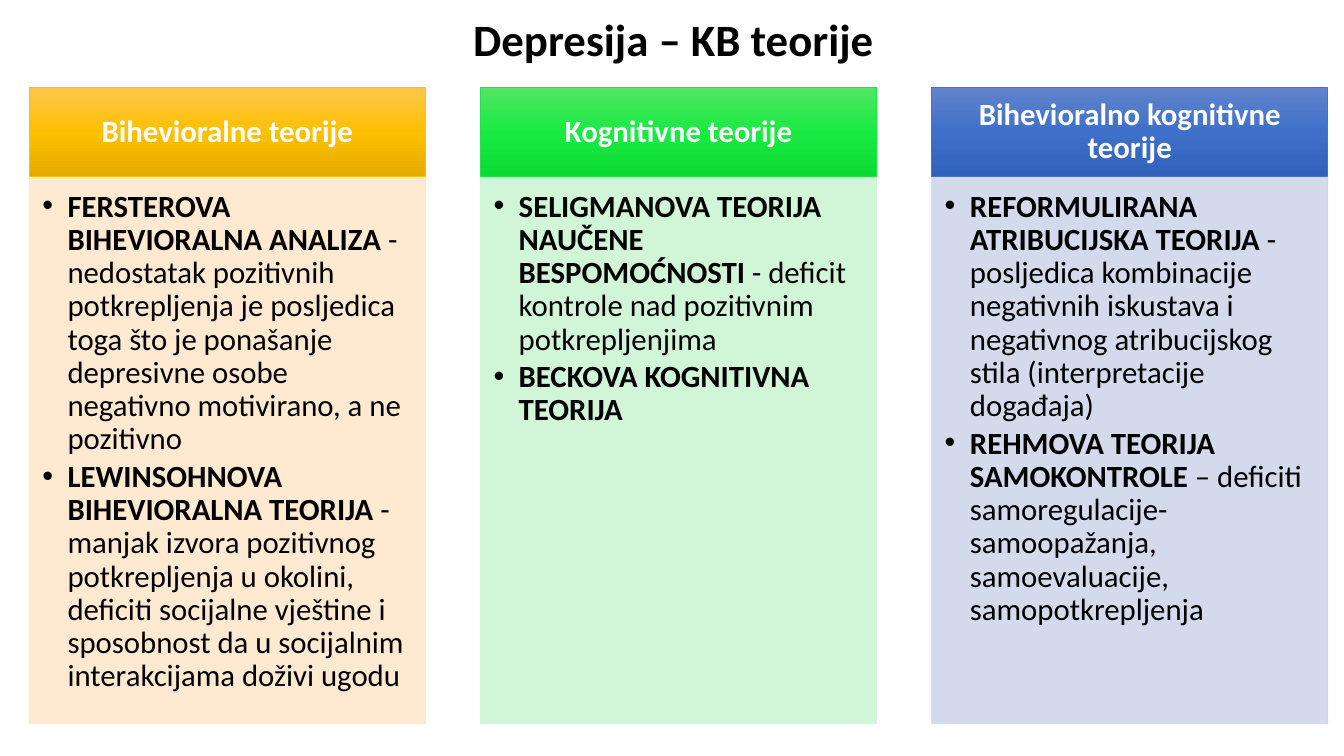
from dataclasses import dataclass

from lxml.etree import SubElement
from pptx import Presentation
from pptx.dml.color import RGBColor
from pptx.enum.shapes import MSO_SHAPE as Preset
from pptx.enum.text import MSO_ANCHOR as Anchor, MSO_AUTO_SIZE as AutoSize, PP_ALIGN as Align
from pptx.oxml.ns import qn
from pptx.util import Inches, Pt


@dataclass(frozen=True)
class Theme:
    font: str = "Calibri"
    title_size: int = 32
    text_size: int = 22
    dark: str = "000000"
    light: str = "FFFFFF"
    line_width: float = 0.5
    body_opacity: int = 90


@dataclass(frozen=True)
class Theory:
    name: str
    description: str = ""


@dataclass(frozen=True)
class Column:
    heading: str
    gradient: tuple[str, str, str]
    outline: str
    tint: str
    theories: tuple[Theory, ...]


THEME = Theme()
COLUMN_LEFT, COLUMN_PITCH, COLUMN_WIDTH = 0.29, (9.24 - 0.29) / 2, 3.93
HEADER_TOP, HEADER_HEIGHT = 0.87, 0.88
BODY_TOP, BODY_HEIGHT = 1.76, 5.42
COMPARISON_LAYOUT = 4

COLUMNS = (
    Column("Bihevioralne teorije", ("FFC64B", "FFC000", "E3AB00"), "FFC000", "FFE8CC", (
        Theory("FERSTEROVA BIHEVIORALNA ANALIZA ",
               "- nedostatak pozitivnih potkrepljenja je posljedica toga što je ponašanje "
               "depresivne osobe negativno motivirano, a ne pozitivno"),
        Theory("LEWINSOHNOVA BIHEVIORALNA TEORIJA ",
               "- manjak izvora pozitivnog potkrepljenja u okolini, deficiti socijalne vještine i "
               "sposobnost da u socijalnim interakcijama doživi ugodu"),
    )),
    Column("Kognitivne teorije", ("51E663", "19EA42", "0CDB34"), "23E148", "CCF6D3", (
        Theory("SELIGMANOVA TEORIJA NAUČENE BESPOMOĆNOSTI ",
               "- deficit kontrole nad pozitivnim potkrepljenjima"),
        Theory("BECKOVA KOGNITIVNA TEORIJA"),
    )),
    Column("Bihevioralno kognitivne teorije", ("6183CB", "3E70CA", "3062BB"), "4472C4", "CFD6EA", (
        Theory("REFORMULIRANA ATRIBUCIJSKA TEORIJA ",
               "- posljedica kombinacije negativnih iskustava i negativnog atribucijskog stila "
               "(interpretacije događaja)"),
        Theory("REHMOVA TEORIJA SAMOKONTROLE ",
               "– deficiti samoregulacije- samoopažanja, samoevaluacije, samopotkrepljenja"),
    )),
)


def place(box, left: float, top: float, width: float, height: float) -> None:
    box.left, box.top = Inches(left), Inches(top)
    box.width, box.height = Inches(width), Inches(height)


def set_frame(frame, anchor: Anchor, insets: tuple[float, float, float, float]) -> None:
    frame.word_wrap = True
    frame.auto_size = AutoSize.NONE
    frame.vertical_anchor = anchor
    frame.margin_left, frame.margin_top, frame.margin_right, frame.margin_bottom = map(Inches, insets)


def set_para(para, align: Align, space_after: float = 0) -> None:
    para.alignment = align
    para.line_spacing = 0.9
    para.space_before = Pt(0)
    para.space_after = Pt(space_after)


def add_span(para, text: str, size: int, color: str, bold: bool) -> None:
    span = para.add_run()
    span.text = text
    span.font.name = THEME.font
    span.font.size = Pt(size)
    span.font.bold = bold
    span.font.color.rgb = RGBColor.from_string(color)


def add_bullet(para) -> None:
    properties = para._p.get_or_add_pPr()
    properties.set("marL", str(Inches(0.25)))
    properties.set("indent", str(Inches(-0.25)))
    SubElement(properties, qn("a:buFont"), typeface="Arial")
    SubElement(properties, qn("a:buChar"), char="•")


def set_outline(box, color: str) -> None:
    box.line.color.rgb = RGBColor.from_string(color)
    box.line.width = Pt(THEME.line_width)


def fill_gradient(box, colors: tuple[str, str, str]) -> None:
    box.fill.gradient()
    box.fill.gradient_angle = 270
    stops = box._element.spPr.find(".//" + qn("a:gsLst"))
    stops.clear()
    for index, color in enumerate(colors):
        stop = SubElement(stops, qn("a:gs"), pos=str(index * 50000))
        SubElement(stop, qn("a:srgbClr"), val=color)


def write_title(title, text: str) -> None:
    place(title, 0.93, 0.17, 11.5, 0.49)
    set_frame(title.text_frame, Anchor.MIDDLE, (0.1, 0.05, 0.1, 0.05))
    para = title.text_frame.paragraphs[0]
    set_para(para, Align.CENTER)
    add_span(para, text, THEME.title_size, THEME.dark, True)


def add_header(slide, column: Column, left: float) -> None:
    box = slide.shapes.add_shape(Preset.RECTANGLE, Inches(left), Inches(HEADER_TOP),
                                 Inches(COLUMN_WIDTH), Inches(HEADER_HEIGHT))
    box.shadow.inherit = False
    fill_gradient(box, column.gradient)
    set_outline(box, column.outline)
    set_frame(box.text_frame, Anchor.MIDDLE, (0.17, 0.1, 0.17, 0.1))
    para = box.text_frame.paragraphs[0]
    set_para(para, Align.CENTER)
    add_span(para, column.heading, THEME.text_size, THEME.light, True)


def write_body(body, column: Column, left: float) -> None:
    place(body, left, BODY_TOP, COLUMN_WIDTH, BODY_HEIGHT)
    body.fill.solid()
    body.fill.fore_color.rgb = RGBColor.from_string(column.tint)
    set_outline(body, column.tint)
    for color in body._element.spPr.iter(qn("a:srgbClr")):
        SubElement(color, qn("a:alpha"), val=str(THEME.body_opacity * 1000))
    frame = body.text_frame
    set_frame(frame, Anchor.TOP, (0.13, 0.13, 0.17, 0.19))
    for index, theory in enumerate(column.theories):
        para = frame.add_paragraph() if index else frame.paragraphs[0]
        set_para(para, Align.LEFT, 3)
        add_bullet(para)
        add_span(para, theory.name, THEME.text_size, THEME.dark, True)
        if theory.description:
            add_span(para, theory.description, THEME.text_size, THEME.dark, False)


def main() -> None:
    deck = Presentation()
    deck.slide_width, deck.slide_height = Inches(13.33), Inches(7.5)
    slide = deck.slides.add_slide(deck.slide_layouts[COMPARISON_LAYOUT])
    title, *bodies = slide.placeholders
    write_title(title, "Depresija – KB teorije")
    for index, (column, body) in enumerate(zip(COLUMNS, bodies)):
        left = COLUMN_LEFT + index * COLUMN_PITCH
        add_header(slide, column, left)
        write_body(body, column, left)
    for unused in bodies[len(COLUMNS):]:
        unused._element.getparent().remove(unused._element)
    deck.save("out.pptx")


if __name__ == "__main__":
    main()
